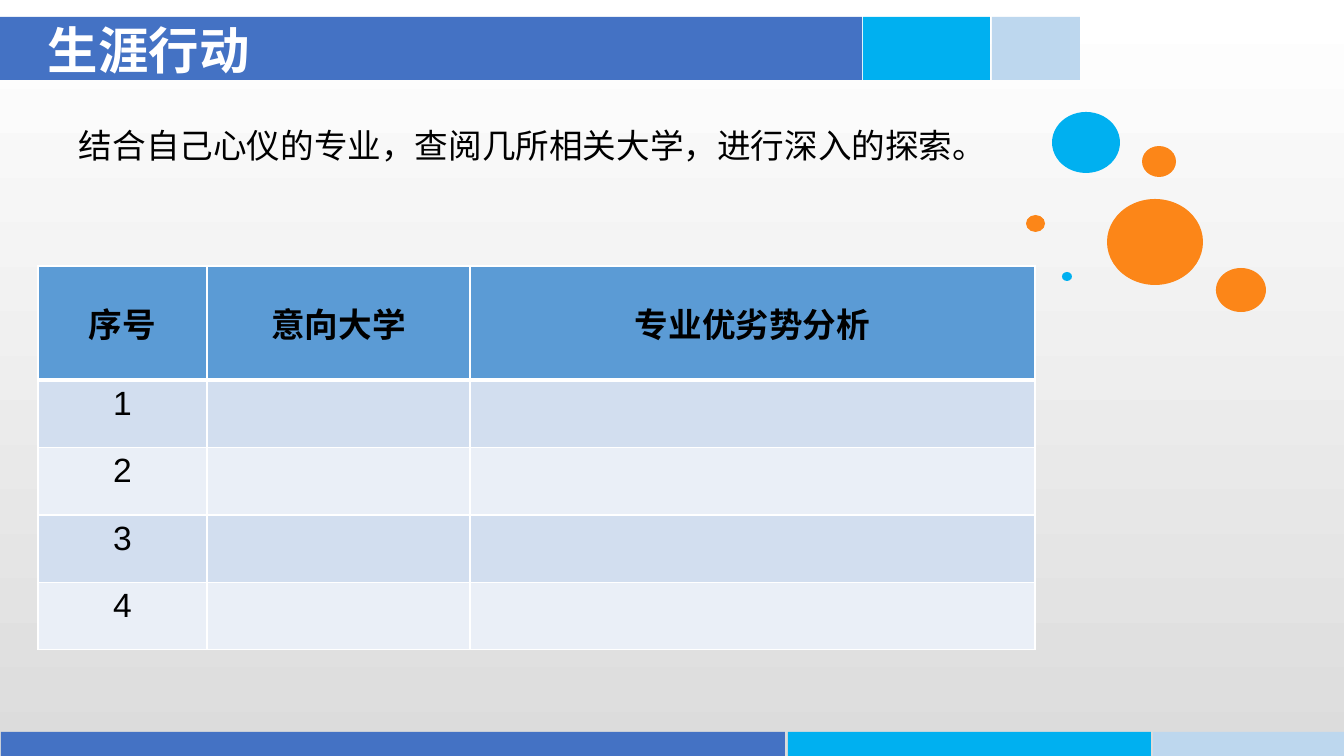
from dataclasses import dataclass

from lxml import etree
from pptx import Presentation
from pptx.dml.color import RGBColor
from pptx.enum.shapes import MSO_SHAPE as Shape
from pptx.enum.text import MSO_ANCHOR as Anchor, PP_ALIGN as Align
from pptx.oxml.ns import qn
from pptx.util import Emu, Pt


@dataclass(frozen=True)
class Theme:
    blue: str = "4472C4"
    cyan: str = "00B0F0"
    pale: str = "BDD7EE"
    orange: str = "FC8618"
    header: str = "5B9BD5"
    bands: tuple = ("D2DEEF", "EAEFF7")
    background: tuple = ("FFFFFF", "DCDCDC")
    white: str = "FFFFFF"
    black: str = "000000"
    latin: str = "Arial"
    chinese: str = "Noto Sans CJK SC"
    title_size: int = 36
    body_size: int = 24
    grid_width: int = 1
    header_rule_width: int = 3


THEME = Theme()

TITLE = "生涯行动"
TASK = "结合自己心仪的专业，查阅几所相关大学，进行深入的探索。"
TABLE = [
    ("序号", "意向大学", "专业优劣势分析"),
    ("1", "", ""),
    ("2", "", ""),
    ("3", "", ""),
    ("4", "", ""),
]

# Lengths in px
SLIDE_SIZE = (1344, 756)
TITLE_BOX = (38, 24, 391, 51)
TASK_BOX = (69, 120, 1011, 82)
TABLE_LEFT, TABLE_TOP, TABLE_HEIGHT, HEADER_HEIGHT = 38, 266, 384, 114
COLUMN_WIDTHS = (169, 263, 565)

# Bars: top, height, then (left, width) of each segment
BARS = [
    (17, 63, [(0, 862), (863, 127), (992, 88)]),
    (732, 24, [(1, 784), (788, 363), (1153, 191)]),
]
SEGMENT_COLOURS = (THEME.blue, THEME.cyan, THEME.pale)
BUBBLES = [
    ((1107, 199, 96, 86), THEME.orange),
    ((1052, 112, 68, 61), THEME.cyan),
    ((1216, 268, 50, 44), THEME.orange),
    ((1142, 146, 34, 31), THEME.orange),
    ((1026, 215, 19, 17), THEME.orange),
    ((1062, 272, 10, 9), THEME.cyan),
]


def px(length):
    return Emu(round(length * 914400 / 100.8))


def rgb(colour):
    return RGBColor.from_string(colour)


def add_filled(slide, kind, box, colour):
    shape = slide.shapes.add_shape(kind, *map(px, box))
    shape.shadow.inherit = False
    shape.fill.solid()
    shape.fill.fore_color.rgb = rgb(colour)
    shape.line.fill.background()


def write(paragraph, text, size, colour, latin, bold=False):
    run = paragraph.add_run()
    run.text = text
    font = run.font
    font.size, font.bold, font.name = Pt(size), bold, latin
    font.color.rgb = rgb(colour)
    east_asian = etree.Element(qn("a:ea"), typeface=THEME.chinese)
    run._r.get_or_add_rPr().find(qn("a:latin")).addnext(east_asian)


def add_text(slide, box, text, size, colour, latin, bold=False, anchor=Anchor.TOP):
    frame = slide.shapes.add_textbox(*map(px, box)).text_frame
    frame.word_wrap = True
    frame.vertical_anchor = anchor
    write(frame.paragraphs[0], text, size, colour, latin, bold)


def add_borders(cell, widths):
    """Draw white cell edges; widths maps L, R, T, B to points."""
    properties = cell._tc.get_or_add_tcPr()
    for side, width in widths.items():
        line = etree.SubElement(properties, qn(f"a:ln{side}"), w=str(Pt(width)))
        fill = etree.SubElement(line, qn("a:solidFill"))
        etree.SubElement(fill, qn("a:srgbClr"), val=THEME.white)


def add_university_table(slide):
    frame = slide.shapes.add_table(
        len(TABLE), len(COLUMN_WIDTHS), px(TABLE_LEFT), px(TABLE_TOP),
        px(sum(COLUMN_WIDTHS)), px(TABLE_HEIGHT))
    table = frame.table
    table.first_row = table.horz_banding = False
    for column, width in zip(table.columns, COLUMN_WIDTHS):
        column.width = px(width)

    entry_height = (TABLE_HEIGHT - HEADER_HEIGHT) / (len(TABLE) - 1)
    for r, entries in enumerate(TABLE):
        is_header = r == 0
        table.rows[r].height = px(HEADER_HEIGHT if is_header else entry_height)
        colour = THEME.header if is_header else THEME.bands[(r - 1) % 2]
        widths = dict.fromkeys("LRTB", THEME.grid_width)
        if r < 2:
            widths["B" if is_header else "T"] = THEME.header_rule_width
        for c, text in enumerate(entries):
            cell = table.cell(r, c)
            add_borders(cell, widths)
            cell.fill.solid()
            cell.fill.fore_color.rgb = rgb(colour)
            cell.vertical_anchor = Anchor.MIDDLE if is_header else Anchor.TOP
            if text:
                paragraph = cell.text_frame.paragraphs[0]
                paragraph.alignment = Align.CENTER
                write(paragraph, text, THEME.body_size, THEME.black,
                      THEME.latin, is_header)


def main():
    deck = Presentation()
    deck.slide_width, deck.slide_height = map(px, SLIDE_SIZE)
    slide = deck.slides.add_slide(deck.slide_layouts[6])

    background = slide.background.fill
    background.gradient()
    background.gradient_angle = 270
    for stop, colour in zip(background.gradient_stops, THEME.background):
        stop.color.rgb = rgb(colour)

    for top, height, segments in BARS:
        for (left, width), colour in zip(segments, SEGMENT_COLOURS):
            add_filled(slide, Shape.RECTANGLE, (left, top, width, height), colour)
    for box, colour in BUBBLES:
        add_filled(slide, Shape.OVAL, box, colour)

    add_text(slide, TITLE_BOX, TITLE, THEME.title_size, THEME.white,
             THEME.chinese, bold=True, anchor=Anchor.MIDDLE)
    add_text(slide, TASK_BOX, TASK, THEME.body_size, THEME.black, THEME.latin)
    add_university_table(slide)
    deck.save("out.pptx")


if __name__ == "__main__":
    main()
